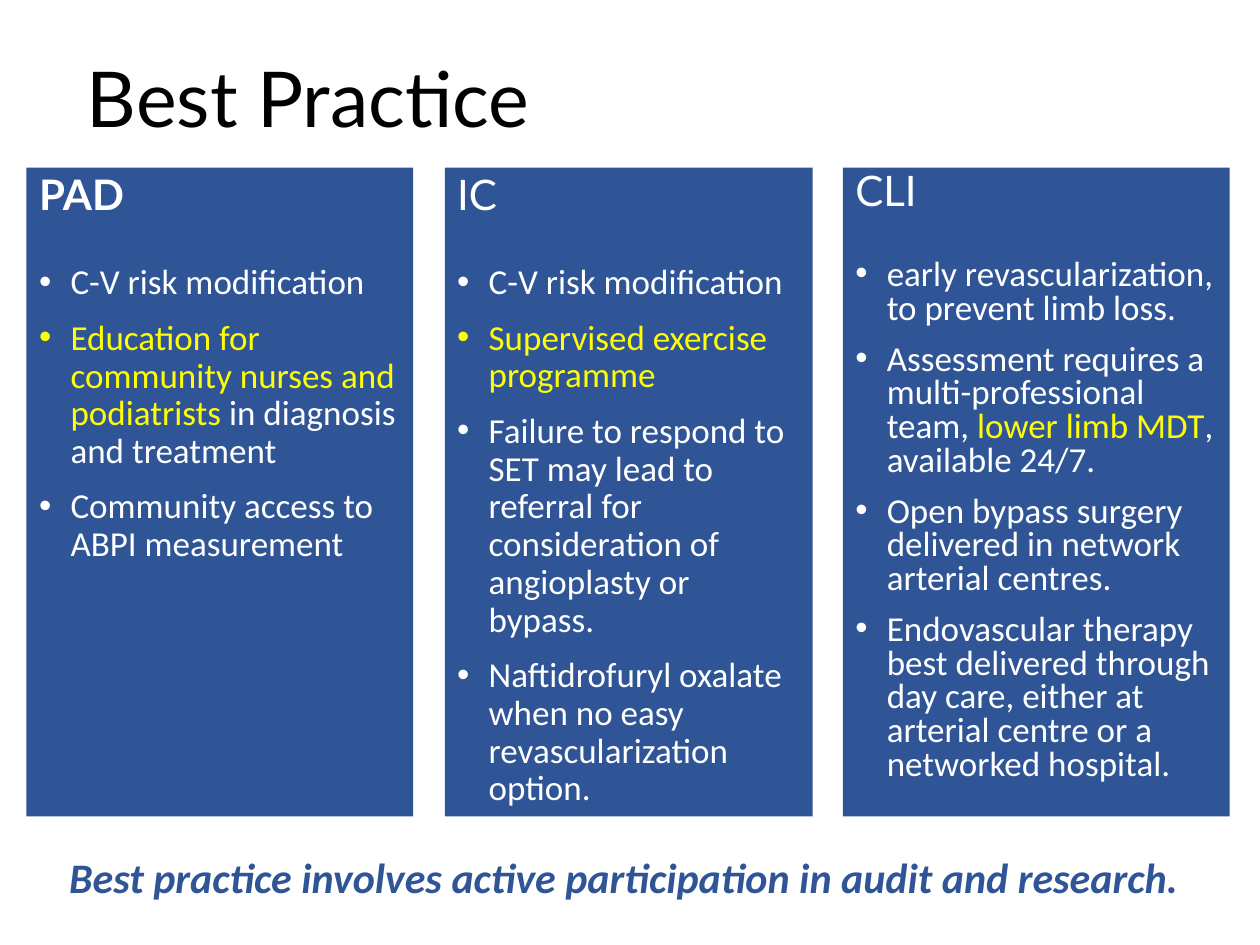
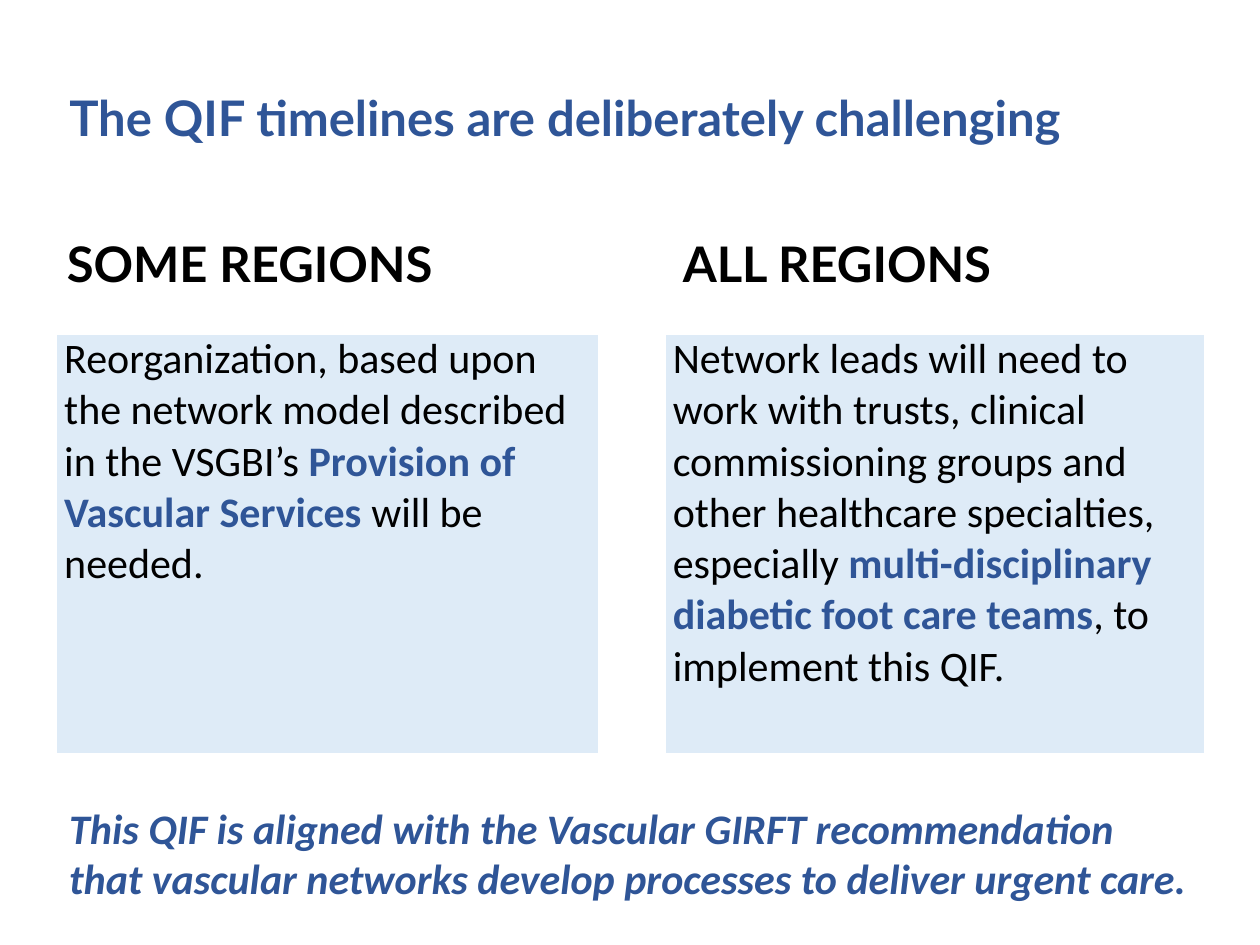
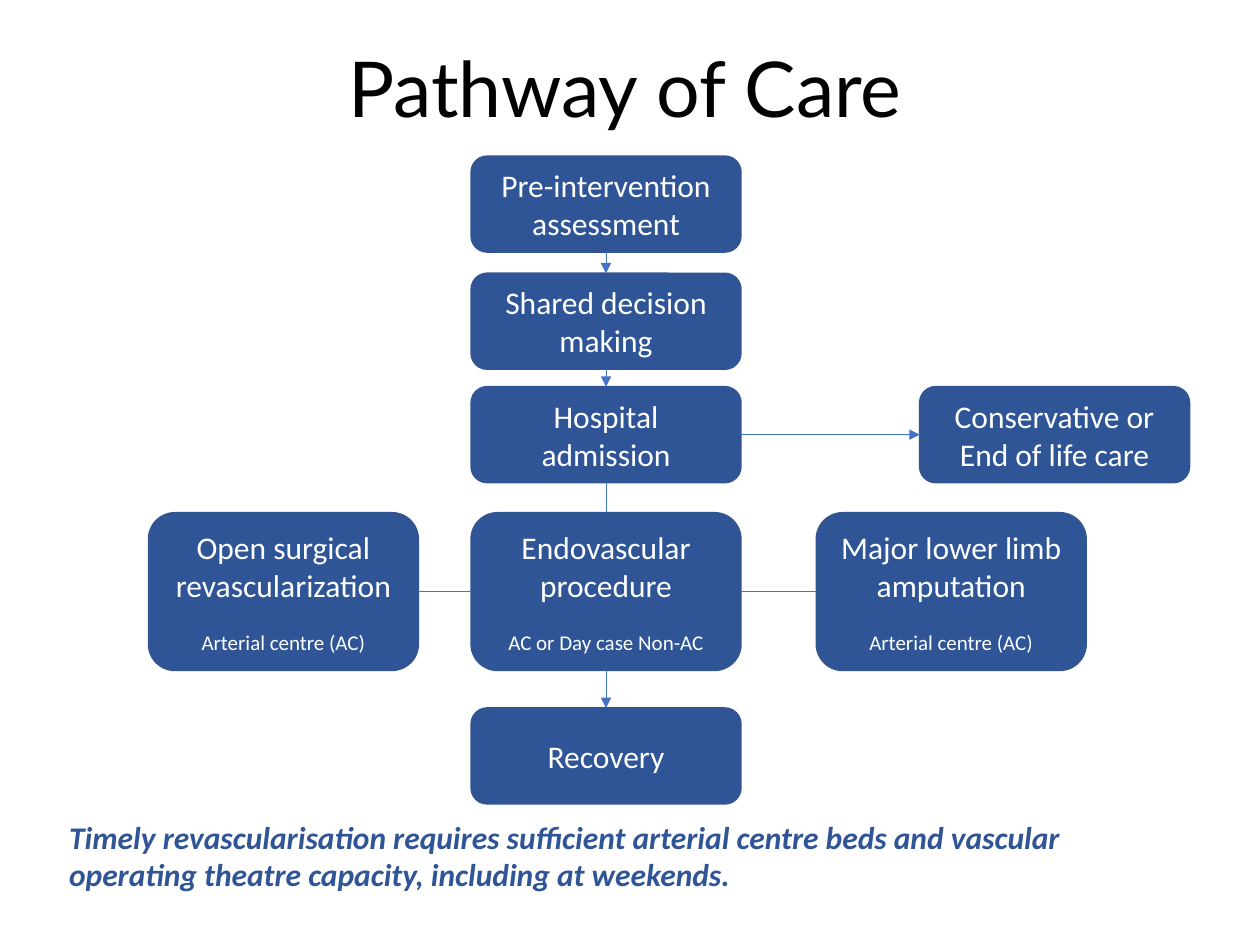
from dataclasses import dataclass

from lxml import etree
from pptx import Presentation
from pptx.dml.color import RGBColor
from pptx.enum.shapes import MSO_CONNECTOR, MSO_SHAPE
from pptx.enum.text import MSO_ANCHOR, MSO_AUTO_SIZE, PP_ALIGN
from pptx.oxml.ns import qn
from pptx.util import Inches, Pt

LINE = MSO_CONNECTOR.STRAIGHT
ROUND = MSO_SHAPE.ROUNDED_RECTANGLE
TOP, MIDDLE = MSO_ANCHOR.TOP, MSO_ANCHOR.MIDDLE
LEFT, CENTER = PP_ALIGN.LEFT, PP_ALIGN.CENTER
FIXED = MSO_AUTO_SIZE.NONE


@dataclass(frozen=True)
class Theme:
    blue = RGBColor.from_string("2F5597")
    edge = RGBColor.from_string("325491")
    link = RGBColor.from_string("4472C4")
    pale = RGBColor.from_string("DEEBF7")
    yellow = RGBColor.from_string("FFFF00")
    black = RGBColor.from_string("000000")
    white = RGBColor.from_string("FFFFFF")
    head = "Lato"
    body = "Calibri"
    title = 44
    label = 28
    large = 24
    list = 20
    box = 18
    small = 12


T = Theme()


def put(par, text, size, color, font=T.body, bold=False, accent=None, strong=False):
    """Write text into a paragraph; parts between asterisks take the accent."""
    par.font.size = Pt(size)
    par.font.name = font
    for i, part in enumerate(text.split("*")):
        if part:
            run = par.add_run()
            run.text = part
            run.font.color.rgb = accent if i % 2 else color
            run.font.bold = bool(strong if i % 2 else bold)


def place(shape, left, top, width, height, anchor=TOP):
    """Move a text shape and return its wrapped, fixed-size frame."""
    shape.left, shape.top = Inches(left), Inches(top)
    shape.width, shape.height = Inches(width), Inches(height)
    frame = shape.text_frame
    frame.word_wrap = True
    frame.auto_size = FIXED
    frame.vertical_anchor = anchor
    return frame


prs = Presentation()
prs.slide_width, prs.slide_height = Inches(10), Inches(7.5)
LIST, PLAIN = prs.slide_layouts[1], prs.slide_layouts[5]

# Titles and closing lines
titles = [
    (LIST, "Best Practice", (0.59, 0.09, 8.79, 1.45), MIDDLE, LEFT,
     T.title, T.black, False),
    (PLAIN, "The QIF timelines are deliberately challenging",
     (0.45, 0.7, 8.87, 0.62), TOP, LEFT, T.label, T.blue, True),
    (PLAIN, "Pathway of Care", (0.24, 0.01, 9.44, 1.45), MIDDLE, CENTER,
     T.title, T.black, False),
]
closings = [
    ("Best practice involves active participation in audit and research.",
     6.71, 0.5, T.large),
    ("This QIF is aligned with the Vascular GIRFT recommendation that vascular "
     "networks develop processes to deliver urgent care.", 6.32, 0.91, T.large),
    ("Timely revascularisation requires sufficient arterial centre beds and "
     "vascular operating theatre capacity, including at weekends.",
     6.44, 0.71, T.box),
]
slides = []
for (layout, text, area, anchor, align, size, color, bold), closing in zip(titles, closings):
    slide = prs.slides.add_slide(layout)
    par = place(slide.shapes.title, *area, anchor).paragraphs[0]
    par.alignment = align
    par.line_spacing = 0.9
    put(par, text, size, color, T.head, bold)

    text, top, height, size = closing
    note = slide.shapes.add_textbox(0, 0, 0, 0)
    par = place(note, 0.45, top, 9.11, height).paragraphs[0]
    par.font.italic = True
    put(par, text, size, T.blue, bold=True)
    slides.append(slide)
practice, timeline, pathway = slides

# Best practice: three columns
columns = [
    ("PAD", True, 0.21, 3.07, 0.9, [
        "C-V risk modification",
        "*Education for community nurses and podiatrists* in diagnosis and treatment",
        "Community access to ABPI measurement",
    ]),
    ("IC", False, 3.53, 2.92, 0.9, [
        "C-V risk modification",
        "*Supervised exercise programme*",
        "Failure to respond to SET may lead to referral for consideration of "
        "angioplasty or bypass.",
        "Naftidrofuryl oxalate when no easy revascularization option.",
    ]),
    ("CLI", False, 6.69, 3.07, 0.8, [
        "early revascularization, to prevent limb loss.",
        "Assessment requires a multi-professional team, *lower limb MDT*, available 24/7.",
        "Open bypass surgery delivered in network arterial centres.",
        "Endovascular therapy best delivered through day care, either at arterial "
        "centre or a networked hospital.",
    ]),
]
for i, (name, bold, left, width, pitch, items) in enumerate(columns):
    if i == 0:
        panel = practice.placeholders[1]
    else:
        panel = practice.shapes.add_textbox(0, 0, 0, 0)
    frame = place(panel, left, 1.33, width, 5.15)
    panel.fill.solid()
    panel.fill.fore_color.rgb = T.blue
    for j, text in enumerate([name] + items):
        par = frame.add_paragraph() if j else frame.paragraphs[0]
        par.line_spacing = pitch
        par.space_before = Pt(10)
        par.space_after = Pt(0 if j else 16)
        props = par._p.get_or_add_pPr()
        props.set("marL", str(Inches(0.25 if j else 0)))
        props.set("indent", str(Inches(-0.25 if j else 0)))
        if j:
            font = etree.SubElement(props, qn("a:buFont"))
            font.set("typeface", "Arial")
            etree.SubElement(props, qn("a:buChar")).set("char", "•")
            put(par, text, T.list, T.white, accent=T.yellow)
        else:
            etree.SubElement(props, qn("a:buNone"))
            put(par, text, T.large, T.white, T.head, bold)

# Timelines: table with an empty middle column
grid = timeline.shapes.add_table(
    2, 3, Inches(0.45), Inches(1.53), Inches(9.11), Inches(4.45)).table
grid.horz_banding = False
for col, width in zip(grid.columns, (4.3, 0.53, 4.28)):
    col.width = Inches(width)
for row, height in zip(grid.rows, (1.12, 3.33)):
    row.height = Inches(height)
for cell in grid.iter_cells():
    cell.fill.background()
    cell.margin_left = cell.margin_right = Inches(0.06)
    cell.margin_top = cell.margin_bottom = 0
regions = [
    (0, 0.08, "SOME REGIONS",
     "Reorganization, based upon the network model described in the VSGBI’s "
     "*Provision of Vascular Services *will be needed."),
    (2, 0.14, "ALL REGIONS",
     "Network leads will need to work with trusts, clinical commissioning groups "
     "and other healthcare specialties, especially *multi-disciplinary diabetic "
     "foot care teams*, to implement this QIF."),
]
for col, margin, name, text in regions:
    head, body = grid.cell(0, col), grid.cell(1, col)
    head.margin_left = Inches(margin)
    head.vertical_anchor = MIDDLE
    put(head.text_frame.paragraphs[0], name, T.label, T.black, T.head, True)
    body.fill.solid()
    body.fill.fore_color.rgb = T.pale
    put(body.text_frame.paragraphs[0], text, T.large, T.black,
        accent=T.blue, strong=True)

# Pathway: boxes, then the links between them
WIDE, LOW, TALL = 2.14, 0.76, 1.25
MID = 3.74
steps = {
    "assess": (MID, 1.24, LOW, ["Pre-intervention assessment"], None),
    "decide": (MID, 2.17, LOW, ["Shared decision making"], None),
    "admit": (MID, 3.07, LOW, ["Hospital admission"], None),
    "care": (7.3, 3.07, LOW, ["Conservative or", "End of life care"], None),
    "open": (1.18, 4.07, TALL, ["Open surgical revascularization"],
             "Arterial centre (AC)"),
    "endo": (MID, 4.07, TALL, ["Endovascular procedure"], "AC or Day case Non-AC"),
    "limb": (6.48, 4.07, TALL, ["Major lower limb amputation"],
             "Arterial centre (AC)"),
    "recover": (MID, 5.62, LOW, ["Recovery"], None),
}
boxes = {}
for key, (left, top, height, lines, site) in steps.items():
    box = pathway.shapes.add_shape(ROUND, 0, 0, 0, 0)
    frame = place(box, left, top, WIDE, height, MIDDLE)
    box.shadow.inherit = False
    box.fill.solid()
    box.fill.fore_color.rgb = T.blue
    box.line.color.rgb = T.edge
    box.line.width = Pt(1)
    for i, text in enumerate(lines):
        par = frame.add_paragraph() if i else frame.paragraphs[0]
        par.alignment = CENTER
        put(par, text, T.box, T.white)
    if site:
        par = frame.add_paragraph()
        par.alignment = CENTER
        par.space_before = Pt(14.5)
        put(par, site, T.small, T.white)
    boxes[key] = box

links = [
    ("assess", 2, "decide", 0, True),
    ("decide", 2, "admit", 0, True),
    ("admit", 3, "care", 1, True),
    ("admit", 2, "endo", 0, False),
    ("open", 3, "endo", 1, False),
    ("endo", 3, "limb", 1, False),
    ("endo", 2, "recover", 0, True),
]
for start, out, end, into, arrow in links:
    link = pathway.shapes.add_connector(LINE, 0, 0, 0, 0)
    link.begin_connect(boxes[start], out)
    link.end_connect(boxes[end], into)
    link.line.color.rgb = T.link
    link.line.width = Pt(0.5)
    if arrow:
        tip = etree.SubElement(link.line._get_or_add_ln(), qn("a:tailEnd"))
        tip.set("type", "triangle")
    etree.SubElement(link._element.spPr, qn("a:effectLst"))

prs.save("out.pptx")
